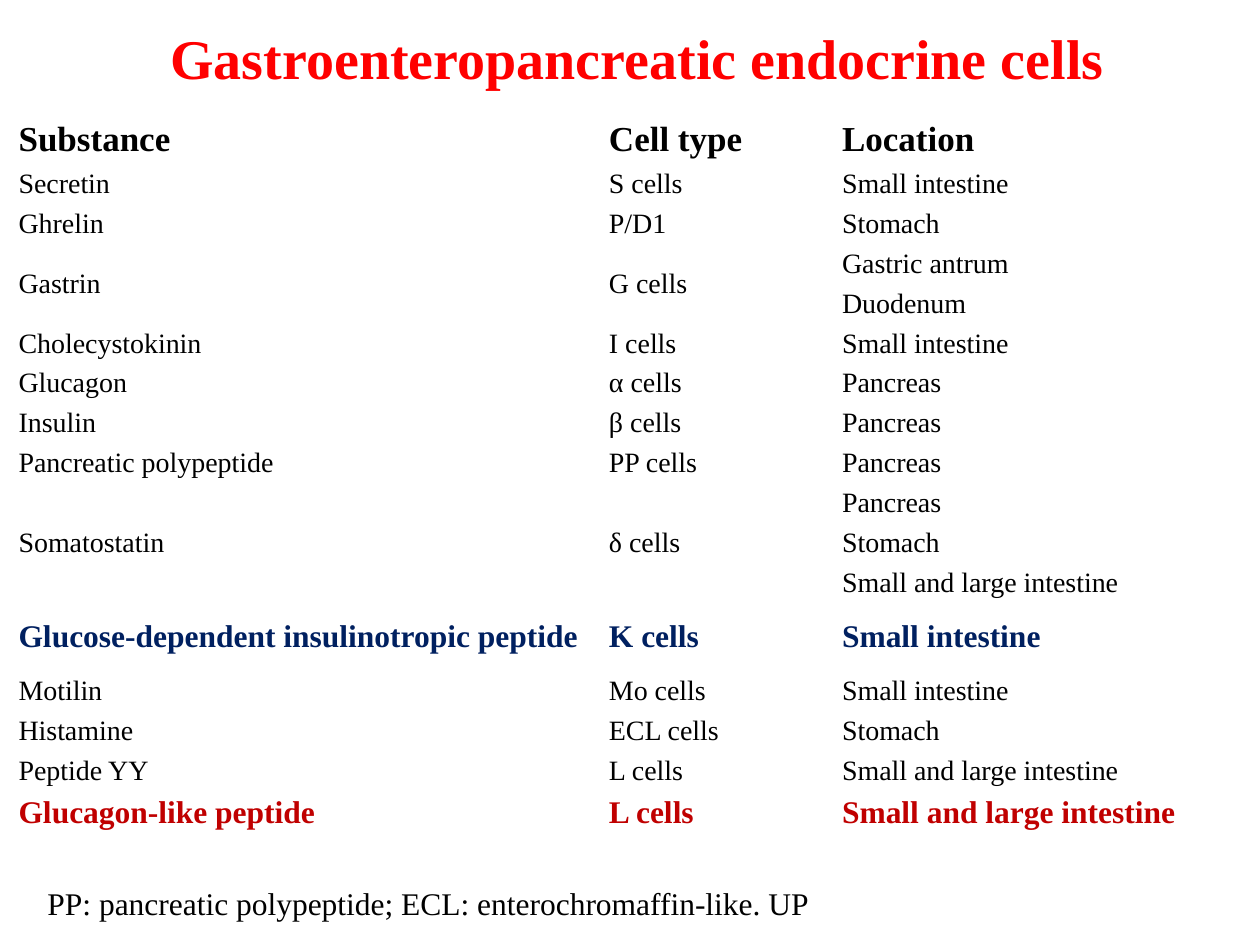
"""Build a slide listing the gastroenteropancreatic endocrine cells."""
from pptx import Presentation
from pptx.dml.color import RGBColor
from pptx.enum import text
from pptx.util import Pt

FONT = "Times New Roman"
TITLE = "Gastroenteropancreatic endocrine cells"
FOOTNOTE = "PP: pancreatic polypeptide; ECL: enterochromaffin-like. UP"
HEADER = ("Substance", "Cell type", ["Location"])
CELLS = [
    ("Secretin", "S cells", ["Small intestine"]),
    ("Ghrelin", "P/D1", ["Stomach"]),
    ("Gastrin", "G cells", ["Gastric antrum", "Duodenum"]),
    ("Cholecystokinin", "I cells", ["Small intestine"]),
    ("Glucagon", "α cells", ["Pancreas"]),
    ("Insulin", "β cells", ["Pancreas"]),
    ("Pancreatic polypeptide", "PP cells", ["Pancreas"]),
    ("Somatostatin", "δ cells", ["Pancreas", "Stomach", "Small and large intestine"]),
    ("Glucose-dependent insulinotropic peptide", "K cells", ["Small intestine"]),
    ("Motilin", "Mo cells", ["Small intestine"]),
    ("Histamine", "ECL cells", ["Stomach"]),
    ("Peptide YY", "L cells", ["Small and large intestine"]),
    ("Glucagon-like peptide", "L cells", ["Small and large intestine"]),
]
NORMAL = (16, "000000", False)
STYLES = {
    "Substance": (20, "000000", True),
    "Glucose-dependent insulinotropic peptide": (18, "002060", True),
    "Glucagon-like peptide": (18, "C00000", True),
}
COLUMN_WIDTHS = (337.4, 133.2, 235.2)
ROW_HEIGHT = 22.6
TALL_ROWS = {"Glucose-dependent insulinotropic peptide": 39}


def color(value):
    return RGBColor.from_string(value)


def write(text_frame, content, size, hex_color, bold):
    text_frame.text = content
    for run in text_frame.paragraphs[0].runs:
        run.font.name = FONT
        run.font.size = Pt(size)
        run.font.bold = bold
        run.font.color.rgb = color(hex_color)


def add_text(slide, box, content, size, hex_color, bold=False):
    text_frame = slide.shapes.add_textbox(*map(Pt, box)).text_frame
    text_frame.word_wrap = True
    write(text_frame, content, size, hex_color, bold)
    return text_frame


def add_cell_table(slide, entries):
    row_count = sum(len(locations) for _, _, locations in entries)
    shape = slide.shapes.add_table(
        row_count, len(COLUMN_WIDTHS), Pt(5.6), Pt(66.2),
        Pt(sum(COLUMN_WIDTHS)), Pt(row_count * ROW_HEIGHT))
    table = shape.table
    table.first_row = table.horz_banding = False
    for column, width in zip(table.columns, COLUMN_WIDTHS):
        column.width = Pt(width)
    for cell in table.iter_cells():
        cell.fill.background()
        cell.vertical_anchor = text.MSO_ANCHOR.MIDDLE
        cell.margin_left = cell.margin_right = Pt(5)
        cell.margin_top = cell.margin_bottom = Pt(1.8)

    top = 0
    for substance, cell_type, locations in entries:
        style = STYLES.get(substance, NORMAL)
        bottom = top + len(locations) - 1
        for column, content in enumerate((substance, cell_type)):
            cell = table.cell(top, column)
            if bottom > top:
                cell.merge(table.cell(bottom, column))
            write(cell.text_frame, content, *style)
        for row, location in enumerate(locations, top):
            table.rows[row].height = Pt(TALL_ROWS.get(substance, ROW_HEIGHT))
            write(table.cell(row, 2).text_frame, location, *style)
        top = bottom + 1


def main():
    presentation = Presentation()
    presentation.slide_width, presentation.slide_height = Pt(720), Pt(540)
    slide = presentation.slides.add_slide(presentation.slide_layouts[6])

    title = add_text(slide, (40.3, 0, 648, 65.5), TITLE, 32, "FF0000", True)
    title.vertical_anchor = text.MSO_ANCHOR.MIDDLE
    title.paragraphs[0].alignment = text.PP_ALIGN.CENTER

    add_cell_table(slide, [HEADER] + CELLS)
    add_text(slide, (20, 501.6, 675, 29), FOOTNOTE, 18, "000000")
    presentation.save("out.pptx")


if __name__ == "__main__":
    main()
